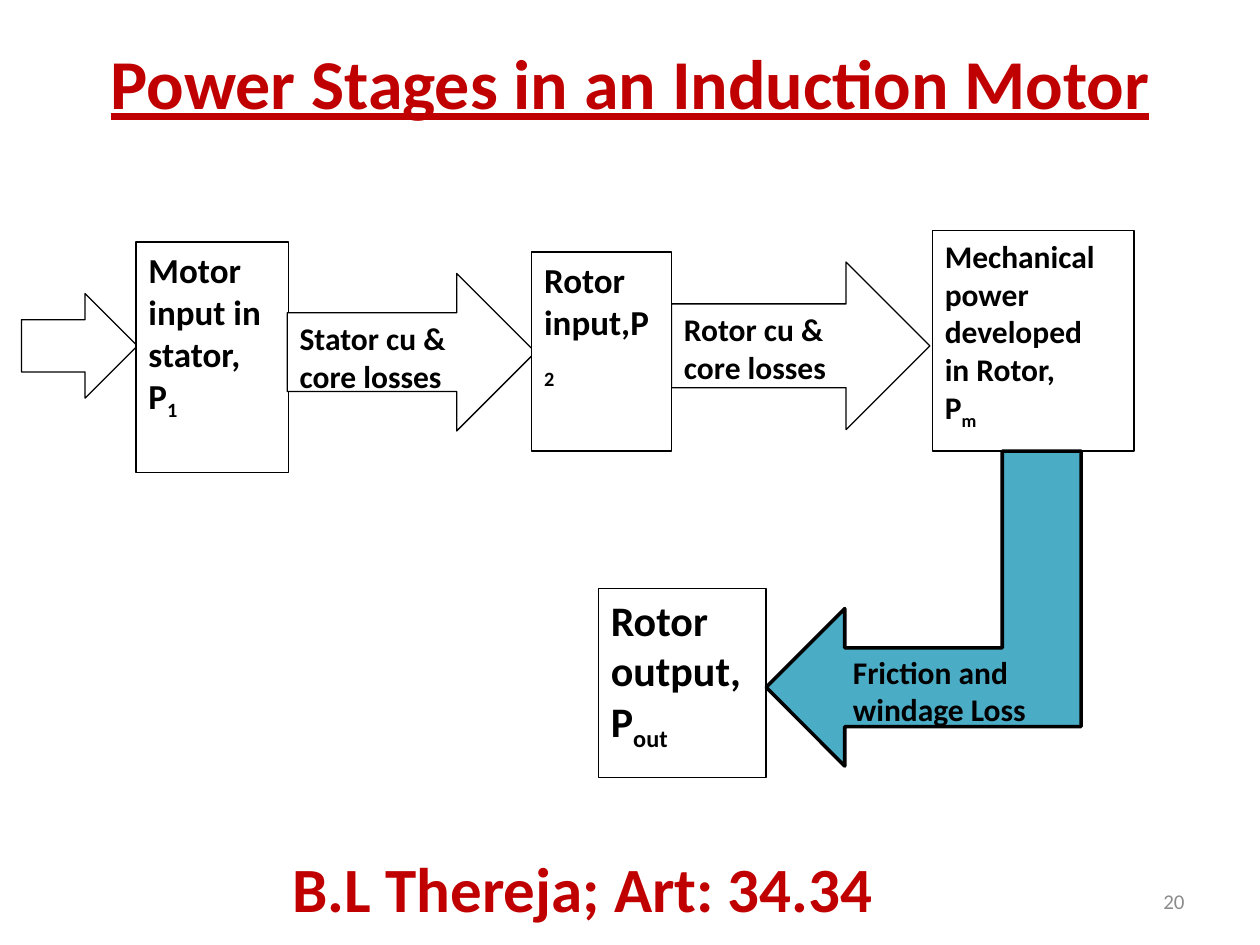
from dataclasses import dataclass

from pptx import Presentation
from pptx.dml.color import RGBColor
from pptx.enum.shapes import MSO_SHAPE
from pptx.enum.text import MSO_ANCHOR, PP_ALIGN
from pptx.oxml.ns import qn
from pptx.util import Inches, Pt

RECTANGLE = MSO_SHAPE.RECTANGLE
RIGHT_ARROW = MSO_SHAPE.RIGHT_ARROW
BENT_ARROW = MSO_SHAPE.BENT_UP_ARROW
TOP, MIDDLE = MSO_ANCHOR.TOP, MSO_ANCHOR.MIDDLE
LEFT, CENTER, RIGHT = PP_ALIGN.LEFT, PP_ALIGN.CENTER, PP_ALIGN.RIGHT


@dataclass(frozen=True)
class Theme:
    font: str = "Calibri"
    heading: RGBColor = RGBColor(0xC0, 0x00, 0x00)
    ink: RGBColor = RGBColor(0x00, 0x00, 0x00)
    muted: RGBColor = RGBColor(0x8C, 0x8C, 0x8C)
    paper: RGBColor = RGBColor(0xFF, 0xFF, 0xFF)
    accent: RGBColor = RGBColor(0x4B, 0xAC, 0xC6)
    title_size: int = 40
    reference_size: int = 36
    output_size: int = 24
    stage_size: int = 20
    label_size: int = 18
    number_size: int = 12
    thin_line: float = 0.75
    thick_line: float = 2


THEME = Theme()


@dataclass(frozen=True)
class Block:
    kind: MSO_SHAPE
    left: float
    top: float
    width: float
    height: float
    text: str = ""
    size: int = THEME.label_size
    fill: RGBColor = THEME.paper
    line: float = THEME.thin_line


@dataclass(frozen=True)
class Label:
    left: float
    top: float
    width: float
    height: float
    text: str
    size: int
    color: RGBColor = THEME.heading
    align: PP_ALIGN = CENTER
    anchor: MSO_ANCHOR = MIDDLE
    bold: bool = True
    underline: bool = False


BLOCKS = (
    Block(RIGHT_ARROW, 0.17, 2.33, 0.92, 0.83),
    Block(RECTANGLE, 1.08, 1.92, 1.21, 1.83, "Motor input in stator, P_1", THEME.stage_size),
    Block(RIGHT_ARROW, 2.28, 2.17, 1.97, 1.25, "Stator cu & core losses"),
    Block(RIGHT_ARROW, 5.33, 2.08, 2.05, 1.33, "Rotor cu & core losses"),
    Block(RECTANGLE, 4.22, 2, 1.11, 1.58, "Rotor input,P_2", THEME.stage_size),
    Block(RECTANGLE, 7.4, 1.83, 1.6, 1.75, "Mechanical power developed\nin Rotor,\nP_m"),
    Block(RECTANGLE, 4.75, 4.67, 1.33, 1.5, "Rotor output, P_out", THEME.output_size),
)
FRICTION_ARROW = Block(BENT_ARROW, 6.08, 3.58, 2.5, 2.5, fill=THEME.accent, line=THEME.thick_line)
LABELS = (
    Label(0.5, 0.17, 9, 0.95, "Power Stages in an Induction Motor", THEME.title_size, underline=True),
    Label(7.17, 6.95, 2.33, 0.4, "20", THEME.number_size, THEME.muted, RIGHT, bold=False),
    Label(0.25, 6.75, 8.75, 0.58, "B.L Thereja; Art: 34.34", THEME.reference_size),
    Label(6.67, 5.13, 1.92, 0.71, "Friction and windage Loss", THEME.label_size, THEME.ink, LEFT, TOP),
)


def write_text(shape, text: str, *, size: int, color: RGBColor = THEME.ink,
               align: PP_ALIGN = LEFT, anchor: MSO_ANCHOR = TOP,
               bold: bool = True, underline: bool = False) -> None:
    """Write lines of text, setting whatever follows an underscore as a subscript."""
    frame = shape.text_frame
    frame.word_wrap = True
    frame.vertical_anchor = anchor
    for index, line in enumerate(text.split("\n")):
        paragraph = frame.add_paragraph() if index else frame.paragraphs[0]
        paragraph.alignment = align
        base, _, subscript = line.partition("_")
        for content, baseline in ((base, 0), (subscript, -25000)):
            if not content:
                continue
            run = paragraph.add_run()
            run.text = content
            font = run.font
            font.name, font.size, font.bold = THEME.font, Pt(size), bold
            font.underline = underline
            font.color.rgb = color
            if baseline:
                font._element.set("baseline", str(baseline))


def draw_block(slide, block: Block):
    shape = slide.shapes.add_shape(block.kind, Inches(block.left), Inches(block.top),
                                   Inches(block.width), Inches(block.height))
    shape.shadow.inherit = False
    shape.fill.solid()
    shape.fill.fore_color.rgb = block.fill
    shape.line.color.rgb = THEME.ink
    shape.line.width = Pt(block.line)
    if block.text:
        write_text(shape, block.text, size=block.size)
    return shape


def draw_label(slide, label: Label) -> None:
    shape = slide.shapes.add_textbox(Inches(label.left), Inches(label.top),
                                     Inches(label.width), Inches(label.height))
    write_text(shape, label.text, size=label.size, color=label.color, align=label.align,
               anchor=label.anchor, bold=label.bold, underline=label.underline)


def main() -> None:
    presentation = Presentation()
    presentation.slide_width, presentation.slide_height = Inches(10), Inches(7.5)
    slide = presentation.slides.add_slide(presentation.slide_layouts[6])
    for block in BLOCKS:
        draw_block(slide, block)
    bent_arrow = draw_block(slide, FRICTION_ARROW)
    bent_arrow.rotation = 90
    bent_arrow.element.spPr.find(qn("a:xfrm")).set("flipV", "1")
    for label in LABELS:
        draw_label(slide, label)
    presentation.save("out.pptx")


if __name__ == "__main__":
    main()
